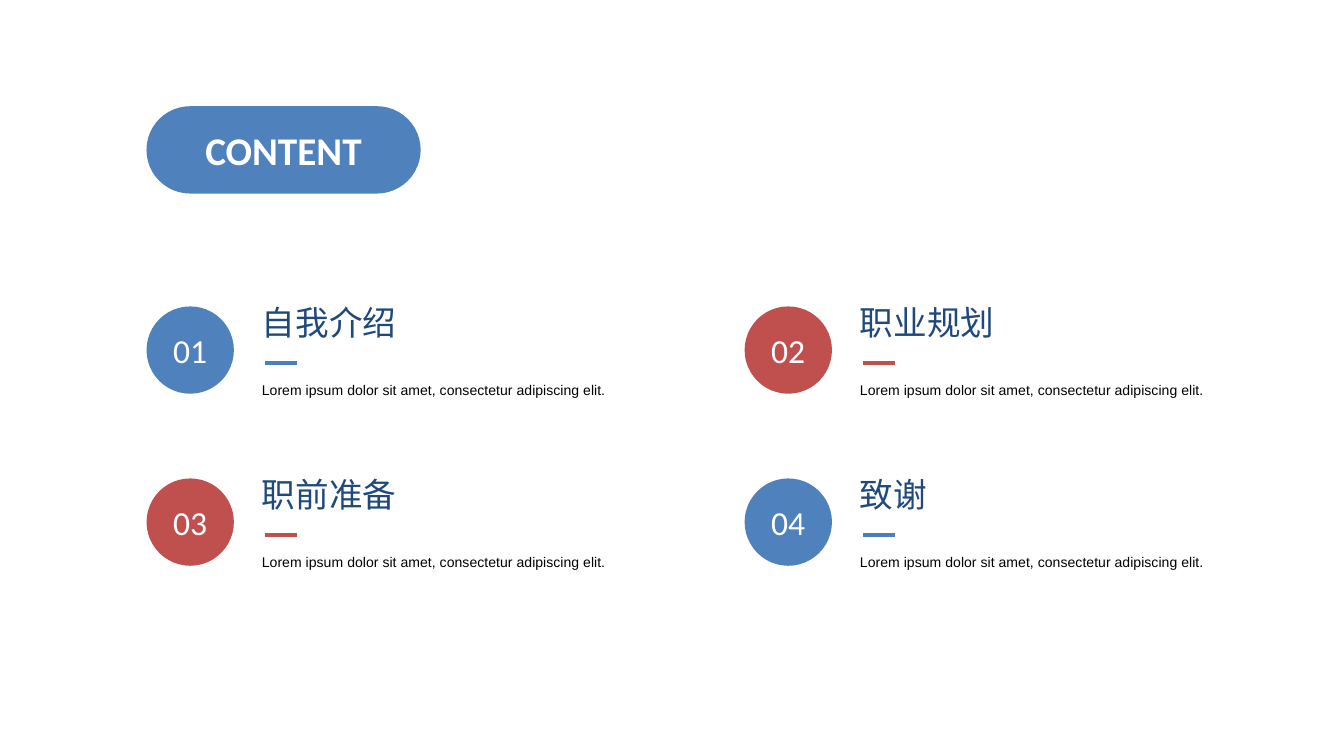
from lxml.etree import SubElement
from pptx import Presentation
from pptx.dml.color import RGBColor
from pptx.enum.shapes import MSO_CONNECTOR, MSO_SHAPE
from pptx.enum.text import MSO_ANCHOR, MSO_AUTO_SIZE, PP_ALIGN
from pptx.oxml.ns import qn
from pptx.util import Inches, Pt

BLUE = RGBColor(0x4F, 0x81, 0xBD)
LINE_BLUE = RGBColor(0x4B, 0x7E, 0xBC)
RED = RGBColor(0xC0, 0x50, 0x4D)
NAVY = RGBColor(0x1F, 0x49, 0x7D)
WHITE = RGBColor(0xFF, 0xFF, 0xFF)
BLACK = RGBColor(0x00, 0x00, 0x00)

SLIDE_WIDTH = Inches(10)
SLIDE_HEIGHT = SLIDE_WIDTH * 9 // 16
LEFT_MARGIN = Inches(1.09)
BADGE_SIZE = Inches(0.65)
GRID_TOP = Inches(2.2)
COLUMN_PITCH, ROW_PITCH = Inches(4.45), Inches(1.28)
COLUMNS = 2
SUMMARY = "Lorem ipsum dolor sit amet, consectetur adipiscing elit."
TOPICS = [
    ("自我介绍", BLUE, LINE_BLUE),
    ("职业规划", RED, RED),
    ("职前准备", RED, RED),
    ("致谢", BLUE, LINE_BLUE),
]


def write(frame, text, size, color, font="Calibri", bold=False):
    """Put one formatted paragraph in a text frame and return it."""
    frame.text = text
    paragraph = frame.paragraphs[0]
    paragraph.font.name = font
    paragraph.font.size = Pt(size)
    paragraph.font.bold = bold
    paragraph.font.color.rgb = color
    return paragraph


def add_filled(slide, preset, box, color, text, size, bold=False):
    """Draw a filled shape with centred white text and return it."""
    shape = slide.shapes.add_shape(preset, *box)
    shape.shadow.inherit = False
    shape.fill.solid()
    shape.fill.fore_color.rgb = color
    shape.line.fill.background()
    shape.text_frame.vertical_anchor = MSO_ANCHOR.MIDDLE
    write(shape.text_frame, text, size, WHITE, bold=bold).alignment = PP_ALIGN.CENTER
    return shape


def add_heading(slide, *box):
    """Draw the heading as a pill in the given box."""
    pill = add_filled(slide, MSO_SHAPE.ROUNDED_RECTANGLE, box, BLUE, "CONTENT", 21, True)
    pill.adjustments[0] = 0.5


def add_label(slide, left, top, width, height, wrap, *style):
    """Add a text box that grows with its text."""
    frame = slide.shapes.add_textbox(left, top, width, height).text_frame
    frame.word_wrap = wrap
    frame.auto_size = MSO_AUTO_SIZE.SHAPE_TO_FIT_TEXT
    write(frame, *style)


def add_accent(slide, left, top, color):
    """Draw the short rule between a topic's name and its summary."""
    accent = slide.shapes.add_connector(
        MSO_CONNECTOR.STRAIGHT, left, top, left + Inches(0.24), top
    )
    accent.line.color.rgb = color
    accent.line.width = Pt(2)
    SubElement(accent.element.spPr, qn("a:effectLst"))


def add_topic(slide, left, top, number, name, badge_color, accent_color):
    """Place one agenda topic relative to its grid cell."""
    text_left = left + Inches(0.76)
    name_width = Inches(0.21 + 0.25 * len(name))
    badge_box = left, top + Inches(0.08), BADGE_SIZE, BADGE_SIZE
    add_filled(slide, MSO_SHAPE.OVAL, badge_box, badge_color, f"{number:02d}", 18)
    add_label(slide, text_left, top, name_width, Inches(0.4), False, name, 18, NAVY)
    add_accent(slide, left + Inches(0.88), top + Inches(0.5), accent_color)
    add_label(slide, text_left, top + Inches(0.59), Inches(2.89), Inches(0.23), True,
              SUMMARY, 7.5, BLACK, "Arial")


def main():
    """Build the agenda slide."""
    presentation = Presentation()
    presentation.slide_width, presentation.slide_height = SLIDE_WIDTH, SLIDE_HEIGHT
    slide = presentation.slides.add_slide(presentation.slide_layouts.get_by_name("Blank"))
    add_heading(slide, LEFT_MARGIN, Inches(0.79), Inches(2.04), BADGE_SIZE)
    for index, topic in enumerate(TOPICS):
        row, column = divmod(index, COLUMNS)
        add_topic(slide, LEFT_MARGIN + column * COLUMN_PITCH, GRID_TOP + row * ROW_PITCH,
                  index + 1, *topic)
    presentation.save("out.pptx")


if __name__ == "__main__":
    main()
